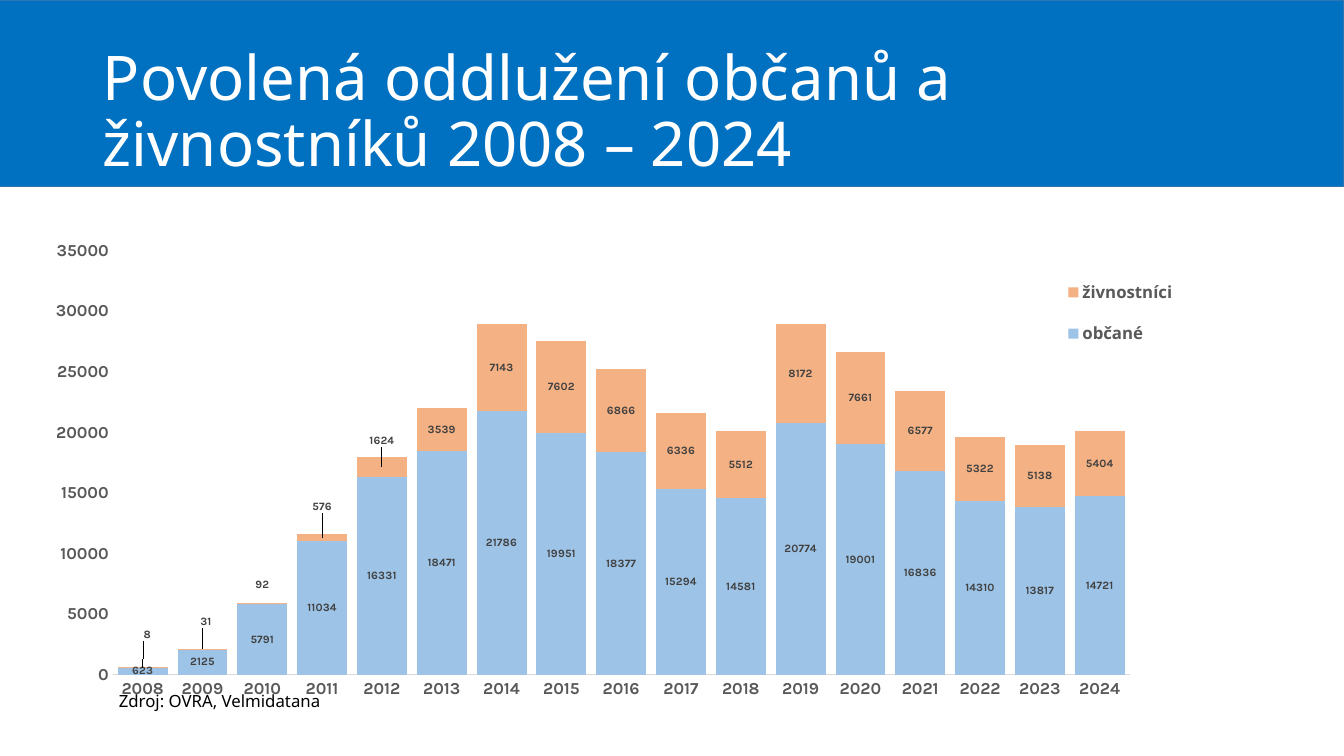
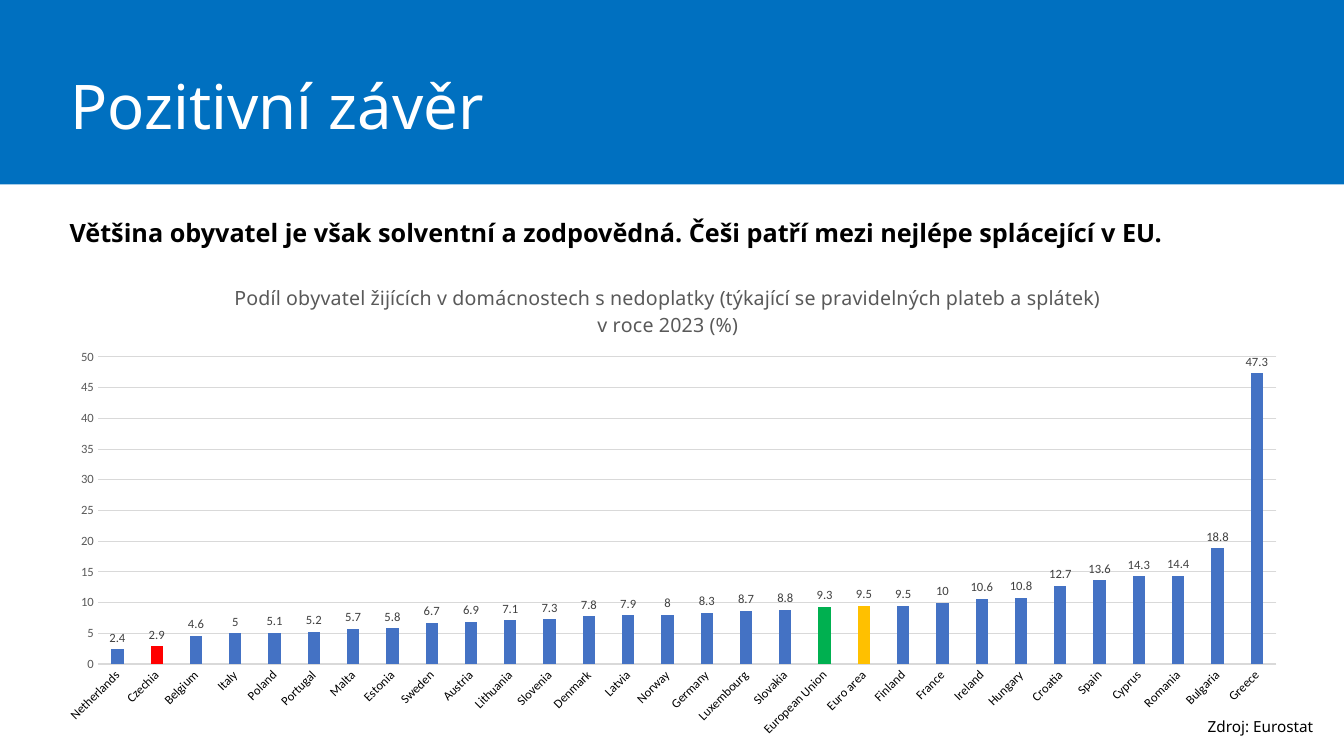
from dataclasses import dataclass, field

from lxml import etree
from pptx import Presentation
from pptx.chart.chart import Chart
from pptx.chart.data import CategoryChartData
from pptx.dml.color import RGBColor
from pptx.enum.chart import XL_CHART_TYPE as ChartType
from pptx.enum.chart import XL_LABEL_POSITION as LabelPosition
from pptx.enum.chart import XL_LEGEND_POSITION as LegendPosition
from pptx.enum.chart import XL_TICK_MARK as TickMark
from pptx.enum.shapes import MSO_SHAPE as Preset
from pptx.enum.text import MSO_ANCHOR as Anchor
from pptx.enum.text import MSO_AUTO_SIZE as AutoSize
from pptx.enum.text import PP_ALIGN as Align
from pptx.oxml.ns import qn
from pptx.slide import Slide
from pptx.util import Inches, Pt

BAND_BLUE, BAND_EDGE = "0070C0", "2E75B6"
WHITE, BLACK = "FFFFFF", "000000"
GREY, DARK_GREY, PALE_GREY = "595959", "404040", "D9D9D9"
TEXT_FONT = "Noto Sans"

Box = tuple[float, float, float, float]


@dataclass
class ChartStyle:
    kind: ChartType
    box: Box
    plot: Box
    font: str
    bold: bool
    axis_size: float
    label_size: float
    category_color: str
    top_value: float
    step: float
    gap: int
    overlap: int
    gridlines: bool = False


@dataclass
class Series:
    name: str
    values: list[float]
    color: str
    accents: dict[int, str] = field(default_factory=dict)
    label_shifts: dict[int, tuple[float, float]] = field(default_factory=dict)


def rgb(color: str) -> RGBColor:
    return RGBColor.from_string(color)


def inches(box: Box) -> list[int]:
    return [Inches(length) for length in box]


def set_font(font, size: float, color: str = BLACK, bold: bool = False,
             name: str = TEXT_FONT) -> None:
    font.size, font.bold, font.name = Pt(size), bold, name
    font.color.rgb = rgb(color)


def write(frame, text: str, *, size: float, color: str = BLACK, bold: bool = False,
          align: Align = Align.LEFT, line_spacing: float | None = None) -> None:
    """Fill a text frame, one paragraph for each line of text."""
    frame.text = text
    for paragraph in frame.paragraphs:
        paragraph.alignment = align
        if line_spacing:
            paragraph.line_spacing = line_spacing
        for run in paragraph.runs:
            set_font(run.font, size, color, bold)


def set_margins(frame, margins: Box) -> None:
    (frame.margin_left, frame.margin_top,
     frame.margin_right, frame.margin_bottom) = inches(margins)


def add_text(slide: Slide, box: Box, text: str, *, margins: Box = (0.1, 0.05, 0.1, 0.05),
             wrap: bool = True, **style) -> None:
    frame = slide.shapes.add_textbox(*inches(box)).text_frame
    frame.word_wrap = wrap
    set_margins(frame, margins)
    write(frame, text, **style)


def add_titled_slide(deck, title: str, *, box: Box, band_height: float,
                     margins: Box, edge: str | None = None) -> Slide:
    slide = deck.slides.add_slide(deck.slide_layouts[5])
    band = slide.shapes.add_shape(Preset.RECTANGLE, 0, 0, deck.slide_width, Inches(band_height))
    band.shadow.inherit = False
    band.fill.solid()
    band.fill.fore_color.rgb = rgb(BAND_BLUE)
    if edge:
        band.line.color.rgb = rgb(edge)
        band.line.width = Pt(0)
    else:
        band.line.fill.background()

    heading = slide.shapes.title
    heading.left, heading.top, heading.width, heading.height = inches(box)
    band.element.addnext(heading.element)
    frame = heading.text_frame
    frame.word_wrap, frame.auto_size = True, AutoSize.NONE
    frame.vertical_anchor = Anchor.MIDDLE
    set_margins(frame, margins)
    write(frame, title, size=44, color=WHITE, line_spacing=0.9)
    return slide


def set_layout(part, index: int, *, target: str | None = None, edges: bool = False,
               **lengths: float) -> None:
    """Give a chart part a manual layout, as fractions of the chart, at a child index."""
    for old in part.findall(qn("c:layout")):
        part.remove(old)
    layout = etree.Element(qn("c:layout"))
    manual = etree.SubElement(layout, qn("c:manualLayout"))
    settings = {"layoutTarget": target} if target else {}
    if edges:
        settings |= {"xMode": "edge", "yMode": "edge"}
    for tag, value in (settings | lengths).items():
        etree.SubElement(manual, qn(f"c:{tag}")).set("val", str(value))
    part.insert(index, layout)


def style_axes(chart: Chart, style: ChartStyle) -> None:
    categories, values = chart.category_axis, chart.value_axis
    for axis, color in ((categories, style.category_color), (values, GREY)):
        axis.major_tick_mark = axis.minor_tick_mark = TickMark.NONE
        axis.has_major_gridlines = False
        set_font(axis.tick_labels.font, style.axis_size, color, style.bold, style.font)
    categories.format.line.color.rgb = rgb(PALE_GREY)
    categories.format.line.width = Pt(0.75)
    values.format.line.fill.background()
    values.minimum_scale, values.maximum_scale = 0, style.top_value
    values.major_unit = style.step
    if style.gridlines:
        values.has_major_gridlines = True
        values.major_gridlines.format.line.color.rgb = rgb(PALE_GREY)
        values.major_gridlines.format.line.width = Pt(0.75)


def style_series(plotted, series: Series, style: ChartStyle) -> None:
    plotted.format.fill.solid()
    plotted.format.fill.fore_color.rgb = rgb(series.color)
    plotted.invert_if_negative = False
    for index, color in series.accents.items():
        fill = plotted.points[index].format.fill
        fill.solid()
        fill.fore_color.rgb = rgb(color)

    label_font = (style.label_size, DARK_GREY, style.bold, style.font)
    labels = plotted.data_labels
    labels.show_value = True
    stacked = style.kind == ChartType.COLUMN_STACKED
    labels.position = LabelPosition.CENTER if stacked else LabelPosition.OUTSIDE_END
    set_font(labels.font, *label_font)
    for index in series.label_shifts:
        set_font(plotted.points[index].data_label.font, *label_font)
    for label in labels._element.findall(qn("c:dLbl")):
        x, y = series.label_shifts[int(label.find(qn("c:idx")).get("val"))]
        set_layout(label, 1, x=x, y=y)


def add_column_chart(slide: Slide, style: ChartStyle, categories: list[str],
                     all_series: list[Series]) -> Chart:
    data = CategoryChartData()
    data.categories = categories
    for series in all_series:
        data.add_series(series.name, series.values)
    chart = slide.shapes.add_chart(style.kind, *inches(style.box), data).chart
    set_font(chart.font, 10, BLACK, style.bold, style.font)
    chart.has_title = chart.has_legend = False
    plot = chart.plots[0]
    plot.vary_by_categories = False
    plot.gap_width, plot.overlap = style.gap, style.overlap
    style_axes(chart, style)
    for plotted, series in zip(plot.series, all_series):
        style_series(plotted, series, style)
    x, y, w, h = style.plot
    plot_area = chart.element.find(f".//{qn('c:plotArea')}")
    set_layout(plot_area, 0, target="inner", edges=True, x=x, y=y, w=w, h=h)
    return chart


def add_debt_relief_slide(deck) -> None:
    slide = add_titled_slide(
        deck, "Povolená oddlužení občanů a živnostníků 2008 – 2024",
        box=(0.92, 0.4, 11.5, 1.45), band_height=1.85,
        margins=(0.1, 0.05, 0.1, 0.05), edge=BAND_EDGE)
    style = ChartStyle(
        ChartType.COLUMN_STACKED, box=(0.36, 2.32, 11.5, 4.76),
        plot=(0.066, 0.035, 0.877, 0.884), font="Karla", bold=True, axis_size=12,
        label_size=8, category_color=GREY, top_value=35000, step=5000, gap=20, overlap=100)
    citizens = Series("občané", [
        623, 2125, 5791, 11034, 16331, 18471, 21786, 19951, 18377, 15294, 14581,
        20774, 19001, 16836, 14310, 13817, 14721], "9DC3E6")
    tradespeople = Series("živnostníci", [
        8, 31, 92, 576, 1624, 3539, 7143, 7602, 6866, 6336, 5512,
        8172, 7661, 6577, 5322, 5138, 5404], "F4B183",
        label_shifts={0: (0.004, -0.067), 1: (0.003, -0.056), 2: (0, -0.04),
                      3: (0, -0.065), 4: (0, -0.054)})
    years = [str(year) for year in range(2008, 2025)]
    chart = add_column_chart(slide, style, years, [citizens, tradespeople])

    chart.has_legend = True
    legend = chart.legend
    legend.position = LegendPosition.RIGHT
    legend.include_in_layout = False
    set_font(legend.font, 12, GREY, bold=True)
    set_layout(legend._element, 1, edges=True, x=0.88, y=0.06, w=0.11, h=0.21)
    add_text(slide, (1.08, 6.8, 9.26, 0.3), "Zdroj: OVRA, Velmidatana", size=12)


def add_conclusion_slide(deck) -> None:
    slide = add_titled_slide(
        deck, "Pozitivní závěr", box=(0.68, 0.32, 11.92, 1.14), band_height=1.83,
        margins=(0.02, 0.39, 0, 0))
    add_text(slide, (0.68, 2.15, 11.59, 0.31),
             "Většina obyvatel je však solventní a zodpovědná. "
             "Češi patří mezi nejlépe splácející v EU.",
             margins=(0.01, 0.01, 0, 0), size=18, bold=True)
    add_text(slide, (11.88, 7.07, 1.26, 0.28), "Zdroj: Eurostat", wrap=False, size=10.9)

    style = ChartStyle(
        ChartType.COLUMN_CLUSTERED, box=(0.42, 2.58, 12.49, 4.83),
        plot=(0.044, 0.199, 0.936, 0.631), font="Calibri", bold=False, axis_size=9,
        label_size=9, category_color=BLACK, top_value=50, step=5, gap=219, overlap=-27,
        gridlines=True)
    arrears = {
        "Netherlands": 2.4, "Czechia": 2.9, "Belgium": 4.6, "Italy": 5, "Poland": 5.1,
        "Portugal": 5.2, "Malta": 5.7, "Estonia": 5.8, "Sweden": 6.7, "Austria": 6.9,
        "Lithuania": 7.1, "Slovenia": 7.3, "Denmark": 7.8, "Latvia": 7.9, "Norway": 8,
        "Germany": 8.3, "Luxembourg": 8.7, "Slovakia": 8.8, "European Union": 9.3,
        "Euro area": 9.5, "Finland": 9.5, "France": 10, "Ireland": 10.6, "Hungary": 10.8,
        "Croatia": 12.7, "Spain": 13.6, "Cyprus": 14.3, "Romania": 14.4, "Bulgaria": 18.8,
        "Greece": 47.3}
    countries = list(arrears)
    highlights = {"Czechia": "FF0000", "European Union": "00B050", "Euro area": "FFC000"}
    accents = {countries.index(name): color for name, color in highlights.items()}
    chart = add_column_chart(slide, style, countries, [
        Series("Series 1", list(arrears.values()), "4472C4", accents)])

    slanted = chart.category_axis._element.find(f"{qn('c:txPr')}/{qn('a:bodyPr')}")
    slanted.set("rot", "-2700000")
    slanted.set("vert", "horz")
    chart.has_title = True
    write(chart.chart_title.text_frame,
          "Podíl obyvatel žijících v domácnostech s nedoplatky "
          "(týkající se pravidelných plateb a splátek)\nv roce 2023 (%)",
          size=14, color=GREY, align=Align.CENTER)
    set_layout(chart.chart_title._element, 1, edges=True, x=0.15, y=0.04)


def main() -> None:
    deck = Presentation()
    deck.slide_width, deck.slide_height = Inches(13.33), Inches(7.5)
    add_debt_relief_slide(deck)
    add_conclusion_slide(deck)
    deck.save("out.pptx")


if __name__ == "__main__":
    main()
